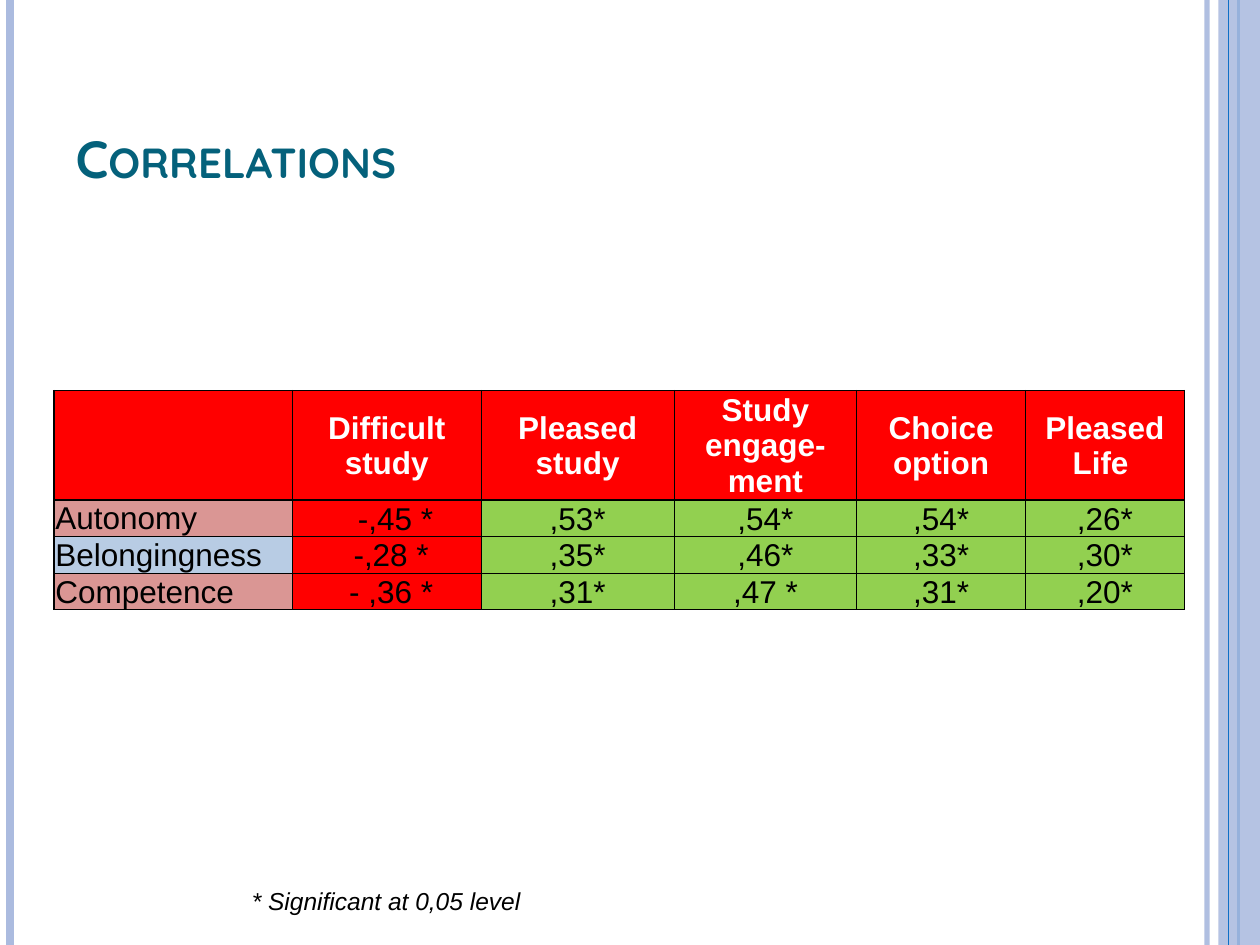
"""Build the Correlations slide: side bars, a title, a table and its footnote."""
from dataclasses import dataclass

from pptx import Presentation
from pptx.dml.color import RGBColor
from pptx.enum.shapes import MSO_CONNECTOR, MSO_SHAPE
from pptx.enum.text import MSO_ANCHOR, MSO_AUTO_SIZE, PP_ALIGN
from pptx.oxml.ns import qn
from pptx.util import Inches, Pt
from lxml.etree import SubElement


@dataclass(frozen=True)
class Theme:
    title_font: str = "Quicksand"
    body_font: str = "Arial"
    title_size: int = 30
    table_size: int = 18
    note_size: int = 14
    title: str = "04617B"
    bar: str = "ABBBDF"
    accent: str = "0F6FC6"
    black: str = "000000"
    white: str = "FFFFFF"
    red: str = "FF0000"
    green: str = "92D050"
    rose: str = "DA9694"
    blue: str = "B8CCE4"
    thick: float = 1
    thin: float = 0.5


THEME = Theme()
PAGE_WIDTH, PAGE_HEIGHT = 10, 7.5
TITLE = "Correlations"
NOTE = "* Significant at 0,05 level"
HEADERS = ["", "Difficult study", "Pleased study", "Study engage-ment", "Choice option", "Pleased Life "]
NEEDS = [
    ("Autonomy", THEME.rose, 0.14, ["-,45 *", ",53*", ",54*", ",54*", ",26*"]),
    ("Belongingness", THEME.blue, 0.07, ["-,28 *", ",35*", ",46*", ",33*", ",30*"]),
    ("Competence", THEME.rose, 0.07, ["- ,36 *", ",31*", ",47 *", ",31*", ",20*"]),
]
COLUMN_WIDTHS = [1.89, 1.5, 1.53, 1.45, 1.34, 1.26]
HEADER_HEIGHT, ROW_HEIGHT = 0.87, 0.21
CELL_INSET = 0.01
BARS_BEHIND = [(9.58, THEME.bar, 3, 93), (0.08, THEME.bar, 4.5, 100), (9.83, THEME.accent, 1.5, 100)]
BARS_IN_FRONT = [(9.75, THEME.accent, 0.75, 100)]


def set_opacity(fill, percent):
    color = fill._xPr.find(qn("a:solidFill"))[0]
    SubElement(color, qn("a:alpha"), val=str(percent * 1000))


def add_bars(page, bars):
    for left, color, width, opacity in bars:
        bar = page.shapes.add_connector(
            MSO_CONNECTOR.STRAIGHT, Inches(left), 0, Inches(left), Inches(PAGE_HEIGHT))
        bar.line.color.rgb = RGBColor.from_string(color)
        bar.line.width = Pt(width)
        if opacity < 100:
            set_opacity(bar.line.fill, opacity)
        SubElement(bar._element.spPr, qn("a:effectLst"))


def add_band(page):
    band = page.shapes.add_shape(
        MSO_SHAPE.RECTANGLE, Inches(9.67), 0, Inches(0.33), Inches(PAGE_HEIGHT))
    band.shadow.inherit = False
    band.fill.solid()
    band.fill.fore_color.rgb = RGBColor.from_string(THEME.bar)
    set_opacity(band.fill, 87)
    band.line.fill.background()


def add_span(para, text, size, color, name=THEME.body_font, bold=False, italic=False):
    span = para.add_run()
    span.text = text
    font = span.font
    font.name, font.size, font.bold, font.italic = name, Pt(size), bold, italic
    font.color.rgb = RGBColor.from_string(color)
    return span


def fill_title(page):
    box = page.shapes.title
    box.left, box.top, box.width, box.height = map(Inches, (0.5, 0.3, 8.17, 1.25))
    frame = box.text_frame
    frame.vertical_anchor = MSO_ANCHOR.BOTTOM
    para = frame.paragraphs[0]
    para.alignment = PP_ALIGN.LEFT
    span = add_span(para, TITLE, THEME.title_size, THEME.title, THEME.title_font, bold=True)
    span.font._element.set("cap", "small")


def set_borders(cell, widths):
    properties = cell._tc.get_or_add_tcPr()
    for side, width in zip("LRTB", widths):
        border = SubElement(properties, qn(f"a:ln{side}"), w=str(Pt(width)))
        paint = SubElement(border, qn("a:solidFill"))
        SubElement(paint, qn("a:srgbClr"), val=THEME.black)


def edge_widths(row, column):
    def weight(edge, strong_edges):
        return THEME.thick if edge in strong_edges else THEME.thin

    verticals = (0, 1, len(COLUMN_WIDTHS))
    return (weight(column, verticals), weight(column + 1, verticals),
            weight(row, (0, 1)), weight(row + 1, (0, 1)))


def format_cell(cell, text, fill, color, bold=False, centred=True, indent=0):
    cell.fill.solid()
    cell.fill.fore_color.rgb = RGBColor.from_string(fill)
    cell.margin_left = Inches(CELL_INSET + indent)
    cell.margin_right = cell.margin_top = Inches(CELL_INSET)
    cell.margin_bottom = 0
    cell.vertical_anchor = MSO_ANCHOR.MIDDLE if centred else MSO_ANCHOR.TOP
    para = cell.text_frame.paragraphs[0]
    para.alignment = PP_ALIGN.CENTER if centred else PP_ALIGN.LEFT
    if text:
        add_span(para, text, THEME.table_size, color, bold=bold)


def add_correlations(page):
    heights = [HEADER_HEIGHT] + [ROW_HEIGHT] * len(NEEDS)
    table = page.shapes.add_table(
        len(heights), len(COLUMN_WIDTHS), Inches(0.43), Inches(3.1),
        Inches(sum(COLUMN_WIDTHS)), Inches(sum(heights))).table
    table.horz_banding = False
    for column, width in zip(table.columns, COLUMN_WIDTHS):
        column.width = Inches(width)
    for row, height in enumerate(heights):
        table.rows[row].height = Inches(height)
        for column in range(len(COLUMN_WIDTHS)):
            set_borders(table.cell(row, column), edge_widths(row, column))
    for column, header in enumerate(HEADERS):
        format_cell(table.cell(0, column), header, THEME.red, THEME.white, bold=True)
    for row, (need, tint, indent, values) in enumerate(NEEDS, start=1):
        format_cell(table.cell(row, 0), need, tint, THEME.black, centred=False)
        for column, value in enumerate(values, start=1):
            negative = column == 1
            format_cell(table.cell(row, column), value, THEME.red if negative else THEME.green,
                        THEME.black, indent=indent if negative else 0)


def add_note(page):
    box = page.shapes.add_textbox(*map(Inches, (1.9, 6.98, 4.6, 0.34)))
    frame = box.text_frame
    frame.word_wrap = True
    frame.auto_size = MSO_AUTO_SIZE.SHAPE_TO_FIT_TEXT
    add_span(frame.paragraphs[0], NOTE, THEME.note_size, THEME.black, italic=True)


def main():
    deck = Presentation()
    deck.slide_width, deck.slide_height = Inches(PAGE_WIDTH), Inches(PAGE_HEIGHT)
    page = deck.slides.add_slide(deck.slide_layouts[5])
    add_bars(page, BARS_BEHIND)
    add_band(page)
    add_bars(page, BARS_IN_FRONT)
    fill_title(page)
    add_correlations(page)
    add_note(page)
    deck.save("out.pptx")


if __name__ == "__main__":
    main()
